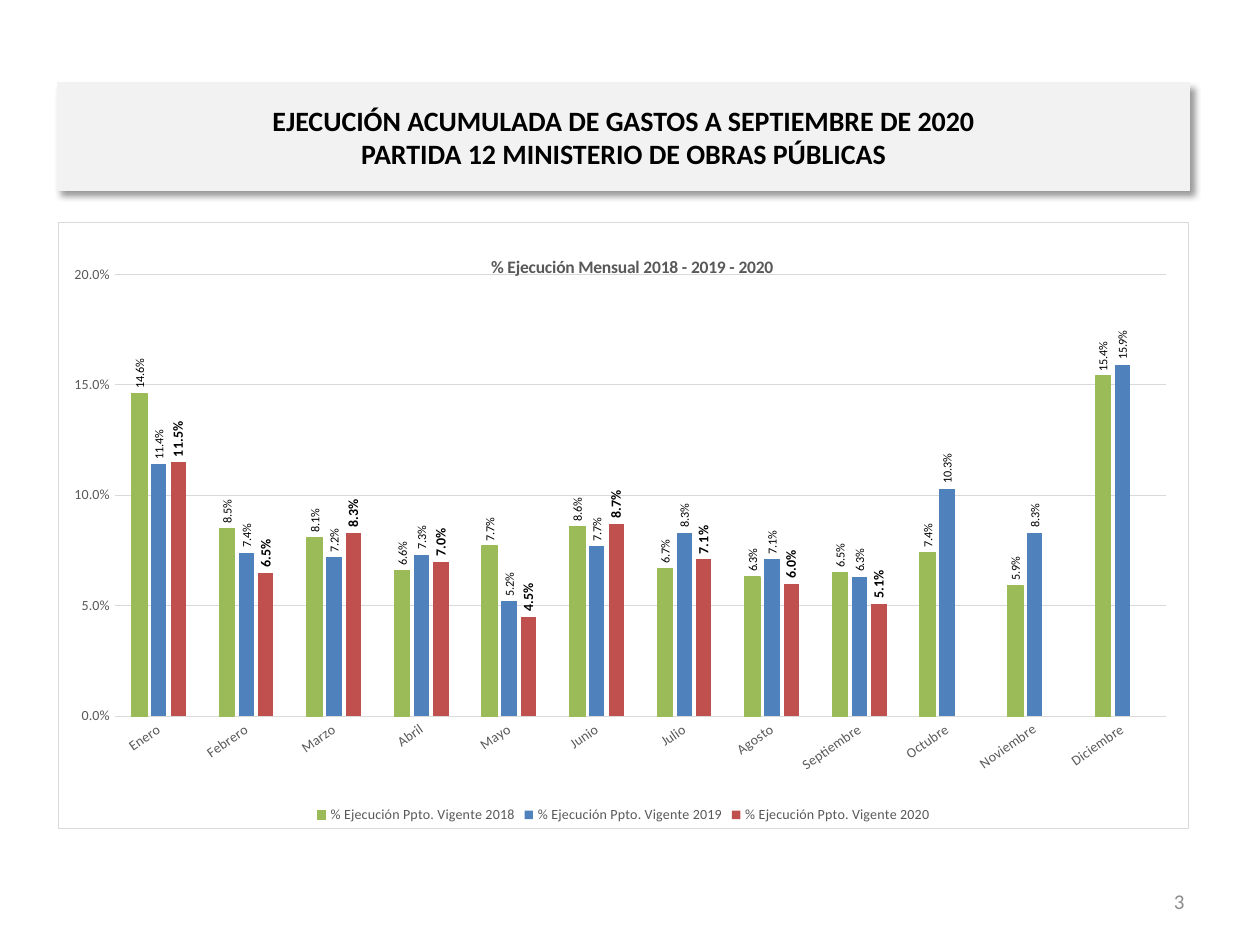
from lxml import etree
from pptx import Presentation
from pptx.chart.data import CategoryChartData
from pptx.dml.color import RGBColor
from pptx.enum.chart import XL_CHART_TYPE, XL_LABEL_POSITION, XL_LEGEND_POSITION, XL_TICK_MARK
from pptx.enum.shapes import MSO_SHAPE
from pptx.enum.text import MSO_ANCHOR, PP_ALIGN
from pptx.oxml import parse_xml
from pptx.oxml.ns import nsdecls, qn
from pptx.util import Inches, Pt

COLORS = {
    "black": "000000", "text": "595959", "number": "8C8C8C", "band": "F2F2F2",
    "grid": "D9D9D9", "white": "FFFFFF",
    "2018": "9BBB59", "2019": "4F81BD", "2020": "C0504D",
}
FONT = "Calibri"
MONTHS = ["Enero", "Febrero", "Marzo", "Abril", "Mayo", "Junio", "Julio", "Agosto",
          "Septiembre", "Octubre", "Noviembre", "Diciembre"]
EXECUTION = {
    "2018": [0.146, 0.085, 0.081, 0.066, 0.077, 0.086, 0.067, 0.063, 0.065, 0.074, 0.059, 0.154],
    "2019": [0.114, 0.074, 0.072, 0.073, 0.052, 0.077, 0.083, 0.071, 0.063, 0.103, 0.083, 0.159],
    "2020": [0.115, 0.065, 0.083, 0.07, 0.045, 0.087, 0.071, 0.06, 0.051, None, None, None],
}


def write_text(frame, text, size=12, color="black", bold=False, align=PP_ALIGN.CENTER):
    frame.word_wrap = True
    frame.vertical_anchor = MSO_ANCHOR.MIDDLE
    paragraph = frame.paragraphs[0]
    paragraph.text = text
    paragraph.alignment = align
    style_font(paragraph.font, size, color, bold)


def style_font(font, size, color, bold=False):
    font.name = FONT
    font.size = Pt(size)
    font.bold = bold
    font.color.rgb = RGBColor.from_string(COLORS[color])


presentation = Presentation()
presentation.slide_width = Inches(10)
presentation.slide_height = Inches(7.5)
slide = presentation.slides.add_slide(presentation.slide_layouts[6])

number_box = slide.shapes.add_textbox(Inches(7.17), Inches(6.95), Inches(2.33), Inches(0.4))
write_text(number_box.text_frame, "3", color="number", align=PP_ALIGN.RIGHT)

title = slide.shapes.add_shape(
    MSO_SHAPE.RECTANGLE, Inches(0.46), Inches(0.66), Inches(8.98), Inches(0.85))
title.fill.solid()
title.fill.fore_color.rgb = RGBColor.from_string(COLORS["band"])
title.line.color.rgb = RGBColor.from_string(COLORS["band"])
title.line.width = Pt(0.75)
title.shadow.inherit = False
effects = title._element.spPr.find(qn("a:effectLst"))
effects.append(parse_xml(
    f'<a:outerShdw {nsdecls("a")} blurRad="{Pt(4)}" dist="{Pt(3)}" dir="2700000" algn="tl" '
    f'rotWithShape="0"><a:srgbClr val="{COLORS["black"]}"><a:alpha val="40000"/></a:srgbClr>'
    '</a:outerShdw>'))
write_text(
    title.text_frame,
    "EJECUCIÓN ACUMULADA DE GASTOS A SEPTIEMBRE DE 2020\vPARTIDA 12 MINISTERIO DE OBRAS PÚBLICAS",
    size=16, bold=True)

chart_data = CategoryChartData(number_format="0.0%")
chart_data.categories = MONTHS
for year, values in EXECUTION.items():
    chart_data.add_series(f"% Ejecución Ppto. Vigente {year}", values)
chart = slide.shapes.add_chart(
    XL_CHART_TYPE.COLUMN_CLUSTERED, Inches(0.46), Inches(1.76), Inches(8.98), Inches(4.82),
    chart_data).chart
style_font(chart.font, 10, "black")
chart._chartSpace.find(qn("c:txPr")).addprevious(parse_xml(
    f'<c:spPr {nsdecls("c", "a")}><a:solidFill><a:srgbClr val="{COLORS["white"]}"/></a:solidFill>'
    f'<a:ln w="{Pt(0.75)}"><a:solidFill><a:srgbClr val="{COLORS["grid"]}"/></a:solidFill></a:ln>'
    '</c:spPr>'))

chart.has_title = True
chart_title = chart.chart_title
chart_title.text_frame.text = "% Ejecución Mensual 2018 - 2019 - 2020"
style_font(chart_title.text_frame.paragraphs[0].runs[0].font, 10, "text", True)

layouts = [
    (chart_title._element, {"xMode": "edge", "yMode": "edge", "x": 0.38, "y": 0.05}),
    (chart._chartSpace.chart.plotArea,
     {"layoutTarget": "inner", "xMode": "edge", "yMode": "edge",
      "x": 0.05, "y": 0.086, "w": 0.93, "h": 0.729}),
]
for parent, settings in layouts:
    for old_layout in parent.findall(qn("c:layout")):
        parent.remove(old_layout)
    layout = parse_xml(f'<c:layout {nsdecls("c")}><c:manualLayout/></c:layout>')
    for name, value in settings.items():
        etree.SubElement(layout[0], qn(f"c:{name}")).set("val", str(value))
    text = parent.find(qn("c:tx"))
    if text is None:
        parent.insert(0, layout)
    else:
        text.addnext(layout)

chart.has_legend = True
chart.legend.position = XL_LEGEND_POSITION.BOTTOM
chart.legend.include_in_layout = False
style_font(chart.legend.font, 8, "text")

for axis in (chart.category_axis, chart.value_axis):
    axis.major_tick_mark = XL_TICK_MARK.NONE
    axis.minor_tick_mark = XL_TICK_MARK.NONE
    style_font(axis.tick_labels.font, 8, "text")
category_axis, value_axis = chart.category_axis, chart.value_axis
category_axis._element.find(qn("c:txPr")).find(qn("a:bodyPr")).set("rot", "-2100000")
value_axis.minimum_scale = 0
value_axis.maximum_scale = 0.2
value_axis.major_unit = 0.05
value_axis.tick_labels.number_format = "0.0%"
value_axis.tick_labels.number_format_is_linked = False
value_axis.format.line.fill.background()
for line in (category_axis.format.line, value_axis.major_gridlines.format.line):
    line.color.rgb = RGBColor.from_string(COLORS["grid"])
    line.width = Pt(0.75)

plot = chart.plots[0]
plot.gap_width = 219
plot.overlap = -27
plot.vary_by_categories = False
for year, series in zip(EXECUTION, plot.series):
    current = year == "2020"
    series.format.fill.solid()
    series.format.fill.fore_color.rgb = RGBColor.from_string(COLORS[year])
    if year == "2018":
        series.format.line.color.rgb = RGBColor.from_string(COLORS[year])
        series.format.line.width = Pt(0.75)
    labels = series.data_labels
    labels.show_value = True
    labels.number_format = "0.0%"
    labels.number_format_is_linked = False
    labels.position = XL_LABEL_POSITION.OUTSIDE_END
    style_font(labels.font, 8 if current else 7, "black", current)
    body = labels._element.find(qn("c:txPr")).find(qn("a:bodyPr"))
    body.set("rot", "-5400000")
    body.set("vert", "horz")

presentation.save("out.pptx")
